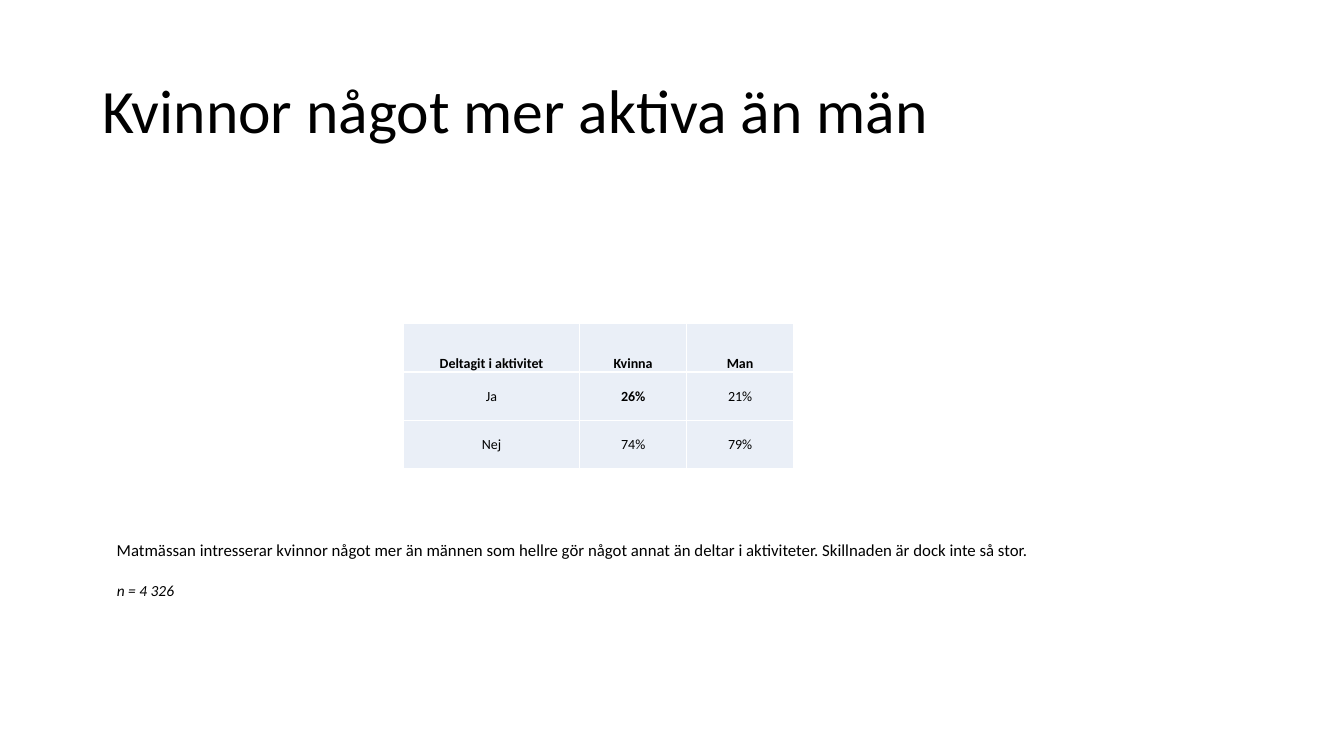
import pptx
import pptx.dml.color
import pptx.enum.text
import pptx.oxml
import pptx.oxml.ns
import pptx.util
from pptx.util import Inches

BLACK = pptx.dml.color.RGBColor(0x00, 0x00, 0x00)
WHITE = pptx.dml.color.RGBColor(0xFF, 0xFF, 0xFF)
PALE = pptx.dml.color.RGBColor(0xEA, 0xEF, 0xF7)
ALIGN = pptx.enum.text.PP_ALIGN
ANCHOR = pptx.enum.text.MSO_ANCHOR


class Deck:
    """Holds the text style and the current slide."""

    face = "Calibri"

    def __init__(self, slide):
        self.slide = slide

    def label(self, frame, text, size, align=ALIGN.LEFT, bold=False, italic=False):
        """Put one styled paragraph in a text frame and return it."""
        frame.text = text
        line = frame.paragraphs[0]
        line.alignment = align
        font = line.font
        font.name, font.size = self.face, pptx.util.Pt(size)
        font.bold, font.italic = bold, italic
        font.color.rgb = BLACK
        return line

    def title(self, text, left, top, width, height):
        shape = self.slide.shapes.title
        shape.left, shape.top = Inches(left), Inches(top)
        shape.width, shape.height = Inches(width), Inches(height)
        frame = shape.text_frame
        frame.vertical_anchor = ANCHOR.MIDDLE
        self.label(frame, text, 44).line_spacing = 0.9

    def note(self, text, left, top, width, height, size, italic=False):
        box = self.slide.shapes.add_textbox(
            Inches(left), Inches(top), Inches(width), Inches(height))
        box.text_frame.word_wrap = True
        self.label(box.text_frame, text, size, italic=italic)

    def edge(self, cell):
        """Draw a thin white line on all four sides of a cell."""
        props = cell._tc.get_or_add_tcPr()
        for spot, side in enumerate(("lnL", "lnR", "lnT", "lnB")):
            props.insert(spot, pptx.oxml.parse_xml(
                f'<a:{side} {pptx.oxml.ns.nsdecls("a")} w="12700"><a:solidFill>'
                f'<a:srgbClr val="{WHITE}"/></a:solidFill></a:{side}>'))

    def table(self, rows, left, top, widths, height, strong):
        """Fill a table; strong lists the (row, column) pairs in bold."""
        grid = self.slide.shapes.add_table(
            len(rows), len(widths), Inches(left), Inches(top),
            Inches(sum(widths)), Inches(height * len(rows))).table
        grid.first_row = grid.horz_banding = False
        for col, width in zip(grid.columns, widths):
            col.width = Inches(width)
        for r, row in enumerate(rows):
            grid.rows[r].height = Inches(height)
            for c, text in enumerate(row):
                cell = grid.cell(r, c)
                cell.margin_left = cell.margin_right = cell.margin_top = Inches(0.01)
                cell.margin_bottom = 0
                cell.vertical_anchor = ANCHOR.MIDDLE if r else ANCHOR.BOTTOM
                cell.fill.solid()
                cell.fill.fore_color.rgb = PALE
                self.edge(cell)
                self.label(cell.text_frame, text, 10, ALIGN.CENTER, (r, c) in strong)


def main():
    show = pptx.Presentation()
    show.slide_width, show.slide_height = Inches(13.33), Inches(7.5)
    deck = Deck(show.slides.add_slide(show.slide_layouts[5]))
    deck.title("Kvinnor något mer aktiva än män", 0.92, 0.4, 11.5, 1.45)
    deck.note("n = 4 326", 1.06, 5.72, 2.41, 0.22, 11, italic=True)
    deck.note("Matmässan intresserar kvinnor något mer än männen som hellre gör "
              "något annat än deltar i aktiviteter. Skillnaden är dock inte så stor.",
              1.06, 5.31, 9.5, 0.3, 12)
    rows = [("Deltagit i aktivitet", "Kvinna", "Man"),
            ("Ja", "26%", "21%"),
            ("Nej", "74%", "79%")]
    deck.table(rows, 4, 3.21, (1.75, 1.06, 1.06), 0.48,
               strong={(0, 0), (0, 1), (0, 2), (1, 1)})
    show.save("out.pptx")


if __name__ == "__main__":
    main()
